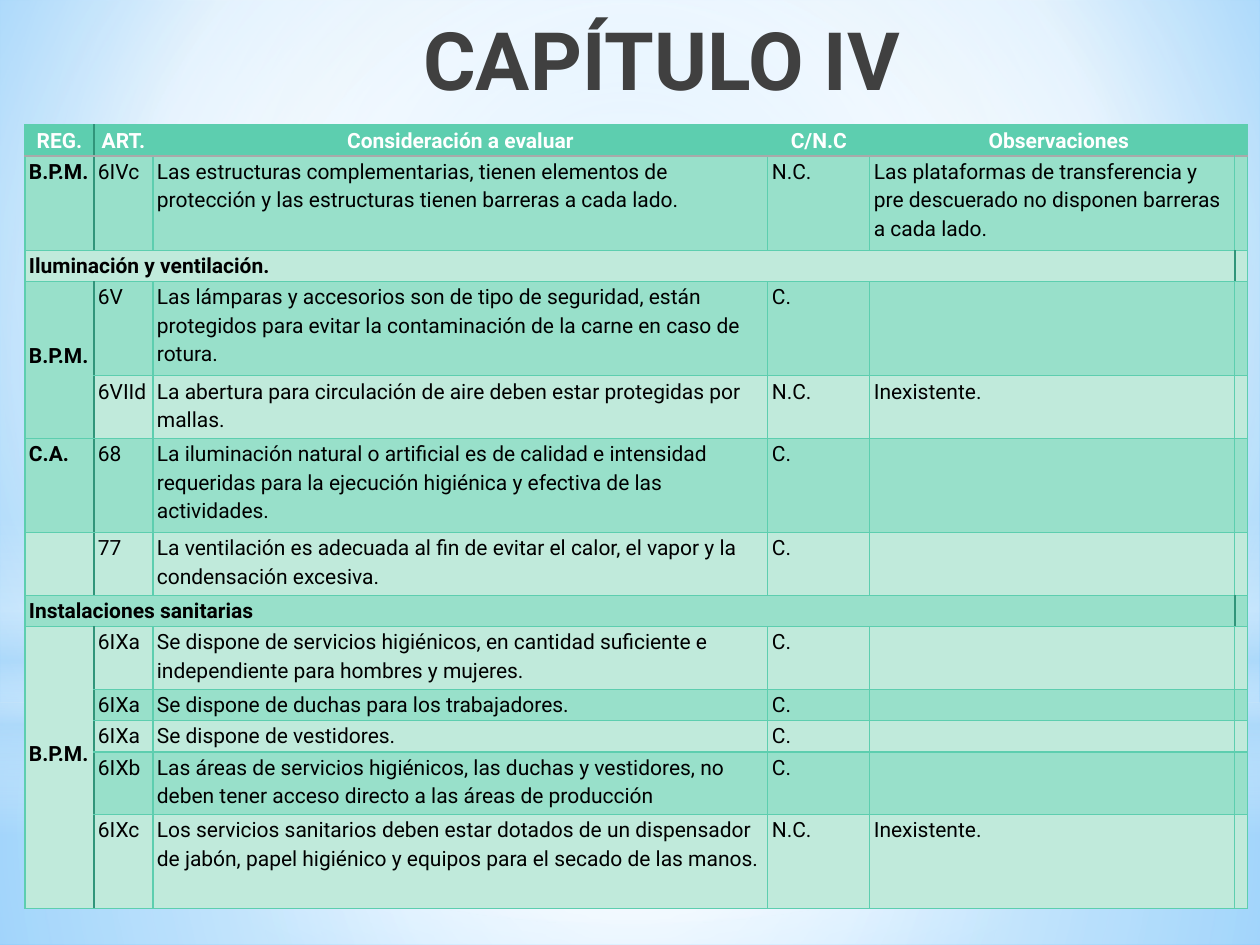
from lxml import etree
from pptx import Presentation
from pptx.dml.color import RGBColor
from pptx.enum.shapes import MSO_SHAPE
from pptx.enum.text import MSO_ANCHOR, PP_ALIGN
from pptx.oxml.ns import qn
from pptx.util import Pt

RECT, OVAL = MSO_SHAPE.RECTANGLE, MSO_SHAPE.OVAL
LEFT, MID = PP_ALIGN.LEFT, PP_ALIGN.CENTER
TOP, HALF = MSO_ANCHOR.TOP, MSO_ANCHOR.MIDDLE

PX = 914400 / 126
FONT = "Roboto"
INK = {
    "title": "404040", "text": "000000", "white": "FFFFFF",
    "green": "5DCEAF", "dark": "98E0CA", "light": "C0EADB",
    "seam": "31957A", "rule": "A9A9A9",
    "sky": "9ED5FF", "blue": "5BB9FF", "mist": "B4DCFA",
}

COLS = [69, 59, 615, 102, 365, 11]
HIGH = 784
ROWS = [
    (1, "REG.", "ART.", "Consideración a evaluar", "C/N.C", "Observaciones"),
    (3, "B.P.M.", "6IVc", "Las estructuras complementarias, tienen elementos de protección "
        "y las estructuras tienen barreras a cada lado.", "N.C.",
        "Las plataformas de transferencia y pre descuerado no disponen barreras a cada lado."),
    (1, "Iluminación y ventilación."),
    (3, "B.P.M.", "6V", "Las lámparas y accesorios son de tipo de seguridad, están protegidos "
        "para evitar la contaminación de la carne en caso de rotura.", "C."),
    (2, "", "6VIId", "La abertura para circulación de aire deben estar protegidas por mallas.",
        "N.C.", "Inexistente."),
    (3, "C.A.", "68", "La iluminación natural o artificial es de calidad e intensidad requeridas "
        "para la ejecución higiénica y efectiva de las actividades.", "C."),
    (2, "", "77", "La ventilación es adecuada al fin de evitar el calor, el vapor y la "
        "condensación excesiva.", "C."),
    (1, "Instalaciones sanitarias"),
    (2, "B.P.M.", "6IXa", "Se dispone de servicios higiénicos, en cantidad suficiente e "
        "independiente para hombres y mujeres.", "C."),
    (1, "", "6IXa", "Se dispone de duchas para los trabajadores.", "C."),
    (1, "", "6IXa", "Se dispone de vestidores.", "C."),
    (2, "", "6IXb", "Las áreas de servicios higiénicos, las duchas y vestidores, no deben tener "
        "acceso directo a las áreas de producción", "C."),
    (3, "", "6IXc", "Los servicios sanitarios deben estar dotados de un dispensador de jabón, "
        "papel higiénico y equipos para el secado de las manos.", "N.C.", "Inexistente."),
]
SPANS = [(0, 4, 0, 5), (2, 0, 2, 4), (3, 0, 4, 0), (7, 0, 7, 4), (8, 0, 12, 0)]
LIFT = {3: 12, 8: 30}


def px(n):
    return round(n * PX)


def write(frame, text, size=12, color="text", bold=False, align=LEFT, gap=1.0):
    para = frame.paragraphs[0]
    para.alignment = align
    para.line_spacing = gap
    if not text:
        para._p.get_or_add_endParaRPr().set("sz", str(size * 100))
        return
    run = para.add_run()
    run.text = text
    run.font.name = FONT
    run.font.size = Pt(size)
    run.font.bold = bold
    run.font.color.rgb = RGBColor.from_string(INK[color])


def blend(root, stops, rect=None):
    grad = etree.Element(qn("a:gradFill"), rotWithShape="1")
    group = etree.SubElement(grad, qn("a:gsLst"))
    for pos, color, alpha in stops:
        stop = etree.SubElement(group, qn("a:gs"), pos=str(pos * 1000))
        tone = etree.SubElement(stop, qn("a:srgbClr"), val=INK[color])
        if alpha < 100:
            etree.SubElement(tone, qn("a:alpha"), val=str(alpha * 1000))
    if rect:
        way = etree.SubElement(grad, qn("a:path"), path="circle")
        sides = {key: str(n * 1000) for key, n in zip("ltrb", rect)}
        etree.SubElement(way, qn("a:fillToRect"), **sides)
    else:
        etree.SubElement(grad, qn("a:lin"), ang="5400000", scaled="0")
    old = root.find(".//" + qn("a:solidFill"))
    old.getparent().replace(old, grad)


def edge(cell, side, color, width=0.75):
    line = etree.SubElement(cell._tc.get_or_add_tcPr(), qn("a:ln" + side), w=str(Pt(width)))
    fill = etree.SubElement(line, qn("a:solidFill"))
    etree.SubElement(fill, qn("a:srgbClr"), val=INK[color])


class Deck:
    def __init__(self):
        self.file = Presentation()
        self.file.slide_width, self.file.slide_height = px(1260), px(945)
        self.slide = self.file.slides.add_slide(self.file.slide_layouts[6])

    def ground(self, stops, rect):
        self.slide.background.fill.solid()
        blend(self.slide._element, stops, rect)

    def glow(self, kind, y, h, stops, rect=None):
        shape = self.slide.shapes.add_shape(kind, 0, px(y), px(1260), px(h))
        shape.shadow.inherit = False
        shape.line.fill.background()
        shape.fill.solid()
        blend(shape._element, stops, rect)

    def label(self, x, y, w, h, text, pad=0, **style):
        frame = self.slide.shapes.add_textbox(px(x), px(y), px(w), px(h)).text_frame
        frame.word_wrap = True
        frame.margin_top = px(pad)
        write(frame, text, **style)

    def grid(self, x, y):
        table = self.slide.shapes.add_table(
            len(ROWS), len(COLS), px(x), px(y), px(sum(COLS)), px(HIGH)).table
        for col, wide in zip(table.columns, COLS):
            col.width = px(wide)
        total = sum(row[0] for row in ROWS)
        for r, (units, *texts) in enumerate(ROWS):
            table.rows[r].height = px(HIGH * units / total)
            texts += [""] * (len(COLS) - len(texts))
            for c, text in enumerate(texts):
                self.fill(table.cell(r, c), r, c, text)
        for r, c, low, last in SPANS:
            table.cell(r, c).merge(table.cell(low, last))

    def fill(self, cell, r, c, text):
        head, band = r == 0, len(ROWS[r]) == 2
        seam = 5 if band else 1
        right = c + 1 == seam or band and c == 0
        for side, hit in (("L", c == seam), ("R", right)):
            edge(cell, side, "seam" if hit else "green", 1.25 if hit else 0.75)
        for side, hit in (("T", r == 1), ("B", head)):
            edge(cell, side, "rule" if hit else "green", 1.25 if hit else 0.75)
        cell.fill.solid()
        tone = "green" if head else "dark" if r % 2 else "light"
        cell.fill.fore_color.rgb = RGBColor.from_string(INK[tone])
        cell.margin_left = cell.margin_right = px(4)
        cell.margin_top = cell.margin_bottom = 0
        cell.vertical_anchor = TOP
        if c == 0 and r in LIFT:
            cell.vertical_anchor = HALF
            cell.margin_bottom = px(LIFT[r])
        write(cell.text_frame, text, color="white" if head else "text",
              bold=head or c == 0, align=MID if head else LEFT, gap=1.15)


def main():
    deck = Deck()
    core = (50, 50, 50, 50)
    deck.ground([(0, "sky", 100), (60, "white", 100), (100, "blue", 100)], (20, 10, 20, 60))
    deck.glow(RECT, 703, 242, [(0, "white", 91), (37, "white", 76), (100, "mist", 79)], core)
    deck.glow(RECT, 0, 703, [(0, "white", 89), (48, "white", 62), (100, "mist", 79)], core)
    deck.glow(RECT, 519, 315, [(0, "white", 0), (29, "white", 30), (45, "mist", 40),
                               (55, "white", 26), (65, "mist", 60), (100, "white", 0)])
    deck.glow(OVAL, 220, 703, [(0, "white", 100), (56, "white", 0)], core)
    deck.label(213, -2, 897, 157, "CAPÍTULO IV", pad=12,
               size=46, color="title", bold=True, align=MID)
    deck.grid(25, 125)
    deck.file.save("out.pptx")


if __name__ == "__main__":
    main()
